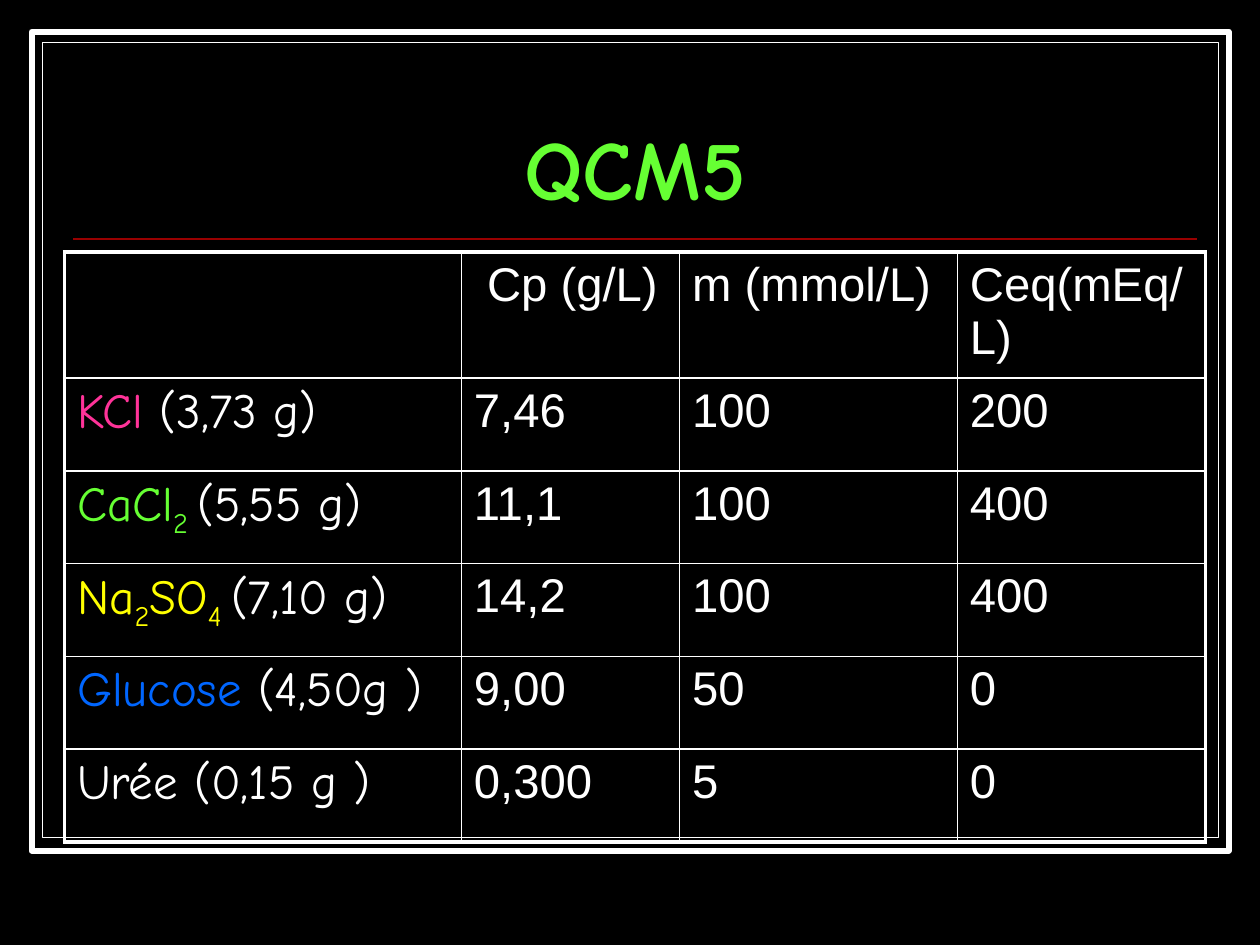
"""Build the QCM5 slide: a framed table of solution concentrations."""
from lxml.etree import SubElement
from pptx import Presentation
from pptx.dml.color import RGBColor
from pptx.enum.shapes import MSO_CONNECTOR as Connector, MSO_SHAPE as Shape
from pptx.enum.text import MSO_ANCHOR as Anchor, PP_ALIGN as Align
from pptx.oxml import parse_xml
from pptx.oxml.ns import nsdecls, qn
from pptx.util import Cm, Pt

COLORS = {
    "black": "000000", "white": "FFFFFF", "rule": "990000", "green": "66FF33",
    "pink": "FF3399", "yellow": "FFFF00", "blue": "0066FF",
}
HEADERS = ["", " Cp (g/L)", "m (mmol/L)", "Ceq(mEq/L)"]
SOLUTES = [
    ("pink", ["KCl "], "(3,73 g)", ["7,46", "100", "200"]),
    ("green", ["CaCl", "2 "], "(5,55 g)", ["11,1", "100", "400"]),
    ("yellow", ["Na", "2", "SO", "4 "], "(7,10 g)", ["14,2", "100", "400"]),
    ("blue", ["Glucose "], "(4,50g )", ["9,00", "50", "0"]),
    ("white", ["Urée "], "(0,15 g )", ["0,300", "5", "0"]),
]
COLUMN_WIDTHS = [8, 4.4, 5.6, 5]
ROW_HEIGHT = 1.87


def add_run(paragraph, text, size, font, color, subscript=False):
    run = paragraph.add_run()
    run.text = text
    run.font.size = Pt(size)
    run.font.name = font
    run.font.color.rgb = RGBColor.from_string(COLORS[color])
    if subscript:
        run.font._element.set("baseline", "-25000")
    return run


def add_border(cell, position, side, width):
    border = parse_xml(
        f'<a:ln{side} {nsdecls("a")} w="{Pt(width)}"><a:solidFill>'
        f'<a:srgbClr val="{COLORS["white"]}"/></a:solidFill></a:ln{side}>'
    )
    cell._tc.get_or_add_tcPr().insert(position, border)


presentation = Presentation()
presentation.slide_width, presentation.slide_height = Cm(25.4), Cm(19.05)
slide = presentation.slides.add_slide(presentation.slide_layouts[6])
slide.background.fill.solid()
slide.background.fill.fore_color.rgb = RGBColor.from_string(COLORS["black"])

for left, top, width, height, weight in [
    (0.64, 0.64, 24.13, 16.51, 3.5),
    (0.86, 0.86, 23.7, 16.03, 0.75),
]:
    frame = slide.shapes.add_shape(Shape.RECTANGLE, Cm(left), Cm(top), Cm(width), Cm(height))
    frame.shadow.inherit = False
    frame.fill.solid()
    frame.fill.fore_color.rgb = RGBColor.from_string(COLORS["black"])
    frame.line.color.rgb = RGBColor.from_string(COLORS["white"])
    frame.line.width = Pt(weight)

rule = slide.shapes.add_connector(Connector.STRAIGHT, Cm(1.48), Cm(4.82), Cm(24.13), Cm(4.82))
rule.line.color.rgb = RGBColor.from_string(COLORS["rule"])
rule.line.width = Pt(1)
SubElement(rule._element.spPr, qn("a:effectLst"))

title = slide.shapes.add_textbox(Cm(1.48), Cm(1.32), Cm(22.65), Cm(3.18))
title.text_frame.word_wrap = True
title.text_frame.vertical_anchor = Anchor.BOTTOM
paragraph = title.text_frame.paragraphs[0]
paragraph.alignment = Align.CENTER
paragraph.line_spacing = 0.8
add_run(paragraph, "QCM5", 48, "Comic Neue", "green").font.bold = True

row_count, column_count = len(SOLUTES) + 1, len(HEADERS)
table = slide.shapes.add_table(
    row_count, column_count, Cm(1.3), Cm(5.08),
    Cm(sum(COLUMN_WIDTHS)), Cm(ROW_HEIGHT * row_count),
).table
table.first_row = table.horz_banding = False
for column, width in zip(table.columns, COLUMN_WIDTHS):
    column.width = Cm(width)
for row in table.rows:
    row.height = Cm(ROW_HEIGHT)

values = [HEADERS] + [["", *amounts] for _, _, _, amounts in SOLUTES]
for row_index, texts in enumerate(values):
    for column_index, text in enumerate(texts):
        cell = table.cell(row_index, column_index)
        cell.fill.background()
        outer_sides = {
            "L": column_index == 0,
            "R": column_index == column_count - 1,
            "T": row_index == 0,
            "B": row_index == row_count - 1,
        }
        for position, (side, outer) in enumerate(outer_sides.items()):
            add_border(cell, position, side, 2.25 if outer else 1)
        if text:
            add_run(cell.text_frame.paragraphs[0], text, 27, "Arial", "white")

for row_index, (color, formula, mass, _) in enumerate(SOLUTES, start=1):
    paragraph = table.cell(row_index, 0).text_frame.paragraphs[0]
    for part in formula:
        add_run(paragraph, part, 28, "Comic Neue", color, part.strip().isdigit())
    add_run(paragraph, mass, 28, "Comic Neue", "white")

presentation.save("out.pptx")
